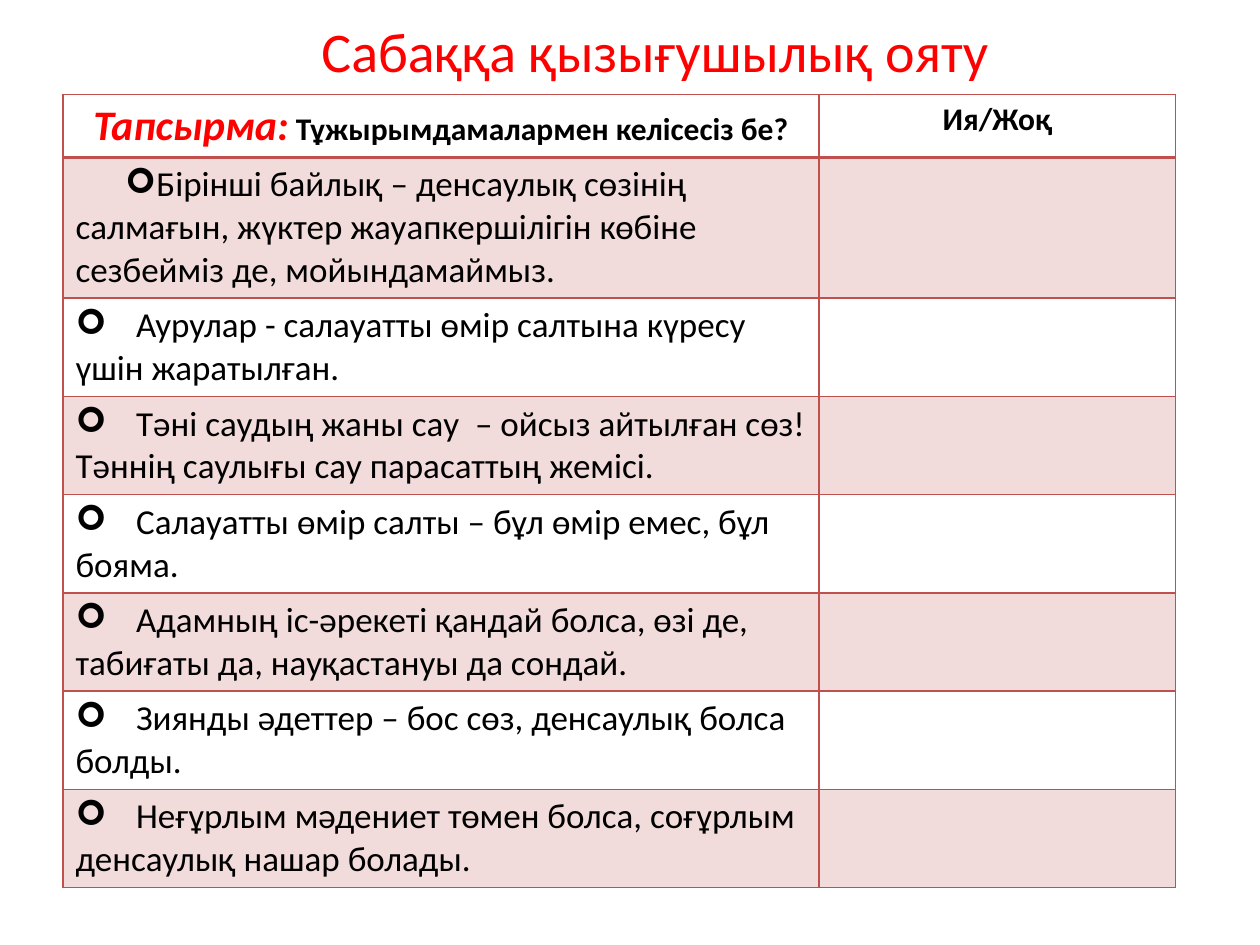
"""Build a slide with a yes/no table of statements about health."""
from dataclasses import dataclass

from lxml import etree
from pptx import Presentation
from pptx import util as u
from pptx.dml.color import RGBColor
from pptx.enum import text
from pptx.oxml.ns import qn

COLORS = {"accent": "C0504D", "red": "FF0000", "black": "000000"}
FONT = "Calibri"
COLUMN_WIDTHS = (15.24, 7.19)
HEADER_HEIGHT = 1.27


@dataclass
class Statement:
    wording: str
    height: float = 1.98
    indent: float = 0
    tab: float = 1.22


STATEMENTS = [
    Statement("Бірінші байлық – денсаулық сөзінің салмағын, жүктер жауапкершілігін "
              "көбіне сезбейміз де, мойындамаймыз.", 2.84, 1, 0),
    Statement("Аурулар - салауатты өмір салтына күресу үшін жаратылған."),
    Statement("Тәні саудың жаны сау  – ойсыз айтылған сөз! "
              "Тәннің саулығы сау парасаттың жемісі."),
    Statement("Салауатты өмір салты – бұл өмір емес, бұл бояма."),
    Statement("Адамның іс-әрекеті қандай болса, өзі де, "
              "табиғаты да, науқастануы да сондай."),
    Statement("Зиянды әдеттер – бос сөз, денсаулық болса болды."),
    Statement("Неғұрлым мәдениет төмен болса, соғұрлым денсаулық нашар болады."),
]


def style_font(font, size: float, color: str, bold: bool = False, italic: bool = False) -> None:
    font.name, font.size = FONT, u.Pt(size)
    font.bold, font.italic = bold, italic
    font.color.rgb = RGBColor.from_string(COLORS[color])


def indent_first_line(paragraph, indent: float):
    properties = paragraph._p.get_or_add_pPr()
    properties.set("marL", "0")
    properties.set("indent", str(u.Cm(indent)))
    return properties


def add_border(cell, side: str, points: float) -> None:
    line = etree.SubElement(cell._tc.get_or_add_tcPr(), qn(f"a:ln{side}"), w=str(u.Pt(points)))
    fill = etree.SubElement(line, qn("a:solidFill"))
    etree.SubElement(fill, qn("a:srgbClr"), val=COLORS["accent"])


def style_cell(cell, row: int) -> None:
    for side in "LRTB":
        is_header_rule = (row, side) in ((0, "B"), (1, "T"))
        add_border(cell, side, 2 if is_header_rule else 1)
    if row % 2:
        cell.fill.solid()
        cell.fill.fore_color.rgb = RGBColor.from_string(COLORS["accent"])
        tint = cell._tc.tcPr.find(qn("a:solidFill")).find(qn("a:srgbClr"))
        etree.SubElement(tint, qn("a:alpha"), val="20000")
    else:
        cell.fill.background()


def write_statement(cell, statement: Statement) -> None:
    paragraph = cell.text_frame.paragraphs[0]
    properties = indent_first_line(paragraph, statement.indent)
    etree.SubElement(properties, qn("a:buFont"), typeface="Wingdings")
    etree.SubElement(properties, qn("a:buChar"), char="➢")
    if statement.tab:
        tabs = etree.SubElement(properties, qn("a:tabLst"))
        etree.SubElement(tabs, qn("a:tab"), pos=str(u.Cm(statement.tab)), algn="l")
    paragraph.add_run().text = ("\t" if statement.tab else "") + statement.wording
    style_font(paragraph.font, 20, "black")


def write_header(table) -> None:
    task, answer = (table.cell(0, column).text_frame.paragraphs[0] for column in range(2))
    task.alignment = answer.alignment = text.PP_ALIGN.CENTER
    label, question = task.add_run(), task.add_run()
    label.text, question.text = "Тапсырма:", " Тұжырымдамалармен келісесіз бе?"
    style_font(label.font, 24, "red", bold=True, italic=True)
    style_font(question.font, 18, "black", bold=True)
    answer.add_run().text = "Ия/Жоқ"
    style_font(answer.font, 18, "black", bold=True)


def add_statement_table(slide) -> None:
    heights = [HEADER_HEIGHT] + [statement.height for statement in STATEMENTS]
    table = slide.shapes.add_table(
        len(heights), len(COLUMN_WIDTHS), u.Cm(1.27), u.Cm(1.9),
        u.Cm(sum(COLUMN_WIDTHS)), u.Cm(sum(heights))).table
    table.first_row = table.horz_banding = False
    for column, width in zip(table.columns, COLUMN_WIDTHS):
        column.width = u.Cm(width)
    for index, height in enumerate(heights):
        table.rows[index].height = u.Cm(height)
        for cell in table.rows[index].cells:
            style_cell(cell, index)
    write_header(table)
    for index, statement in enumerate(STATEMENTS, start=1):
        write_statement(table.cell(index, 0), statement)


def write_title(slide) -> None:
    title = slide.shapes.title
    title.left, title.top = u.Cm(0.43), u.Cm(0.2)
    title.width, title.height = u.Cm(24.56), u.Cm(2.39)
    frame = title.text_frame
    frame.text = "Сабаққа қызығушылық ояту"
    frame.word_wrap = True
    frame.auto_size = text.MSO_AUTO_SIZE.SHAPE_TO_FIT_TEXT
    frame.vertical_anchor = text.MSO_ANCHOR.TOP
    paragraph = frame.paragraphs[0]
    paragraph.alignment = text.PP_ALIGN.CENTER
    indent_first_line(paragraph, 1)
    style_font(paragraph.font, 32, "red")


def main() -> None:
    presentation = Presentation()
    presentation.slide_width, presentation.slide_height = u.Cm(25.4), u.Cm(19.05)
    slide = presentation.slides.add_slide(presentation.slide_layouts[5])
    add_statement_table(slide)
    write_title(slide)
    presentation.save("out.pptx")


if __name__ == "__main__":
    main()
